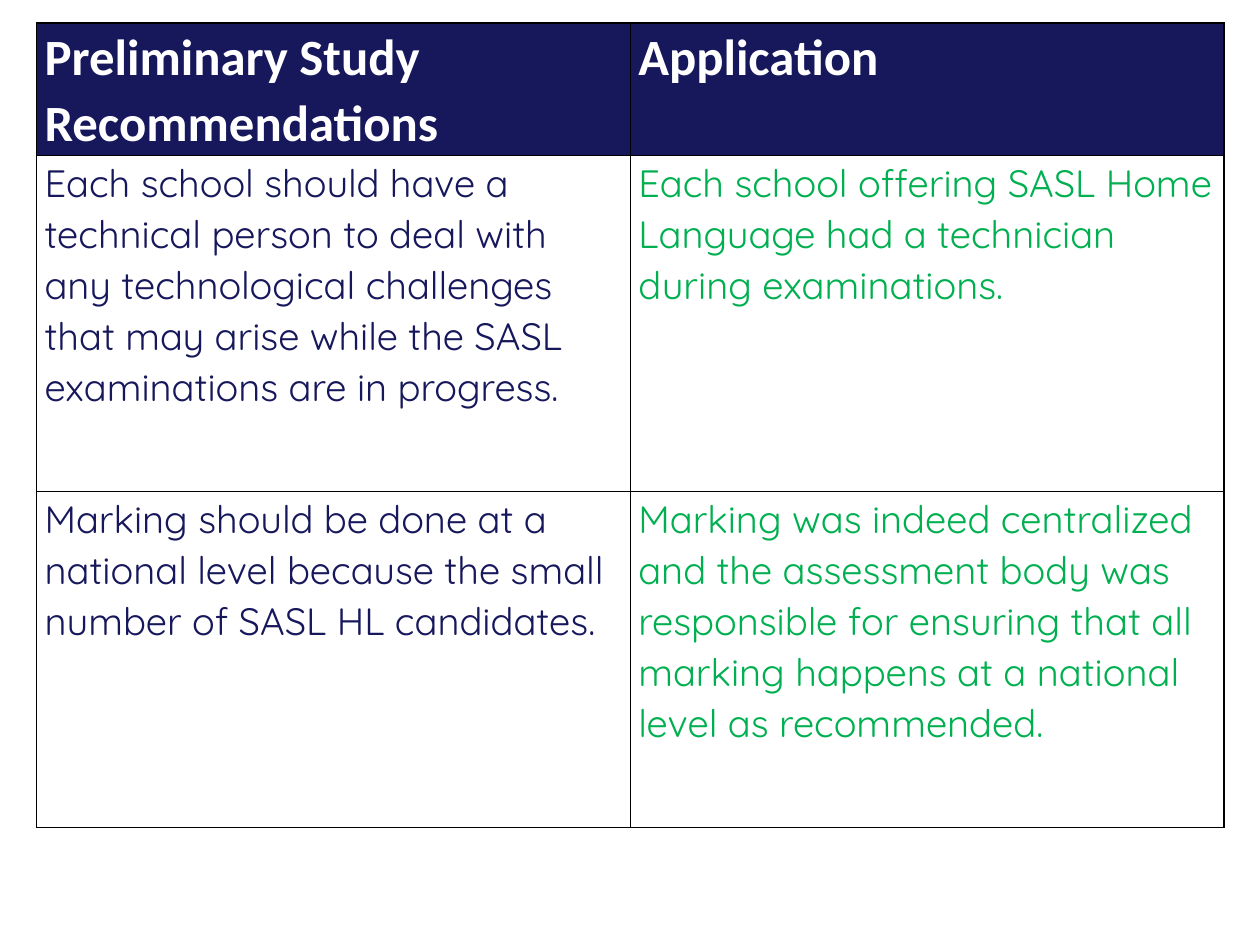
from lxml import etree
from pptx import Presentation
from pptx.dml.color import RGBColor
from pptx.oxml.ns import qn
from pptx.util import Inches, Pt

COLORS = {"navy": "17175C", "green": "00B050", "white": "FFFFFF", "black": "000000"}
HEADS = ["Preliminary Study Recommendations", "Application"]
ROWS = [
    ["Each school should have a technical person to deal with any technological "
     "challenges that may arise while the SASL examinations are in progress.",
     "Each school offering SASL Home Language had a technician during examinations."],
    ["Marking should be done at a national level because the small number of "
     "SASL HL candidates.",
     "Marking was indeed centralized and the assessment body was responsible for "
     "ensuring that all marking happens at a national level as recommended."],
]
HEAD_H = 1.15
CM_PER_INCH = 2.54


def color(name):
    return RGBColor.from_string(COLORS[name])


def add_borders(cell):
    props = cell._tc.get_or_add_tcPr()
    for i, side in enumerate(("lnL", "lnR", "lnT", "lnB")):
        line = etree.Element(qn("a:" + side), w=str(Pt(1)))
        fill = etree.SubElement(line, qn("a:solidFill"))
        etree.SubElement(fill, qn("a:srgbClr"), val=COLORS["black"])
        props.insert(i, line)


def fill_cell(cell, text, font, size, ink, back=None, bold=False):
    cell.margin_left = cell.margin_right = Inches(0.07)
    cell.margin_top = cell.margin_bottom = 0
    if back:
        cell.fill.solid()
        cell.fill.fore_color.rgb = color(back)
    else:
        cell.fill.background()
    add_borders(cell)
    para = cell.text_frame.paragraphs[0]
    para.line_spacing = 1.07
    run = para.add_run()
    run.text = text
    run.font.name = font
    run.font.size = Pt(size)
    run.font.bold = bold
    run.font.color.rgb = color(ink)


def add_study(slide, left, top, width, height):
    """Table of recommendations beside how each one was applied."""
    frame = slide.shapes.add_table(
        len(ROWS) + 1, len(HEADS),
        Inches(left), Inches(top), Inches(width), Inches(height))
    table = frame.table
    table.first_row = True
    table.horz_banding = False
    for col in table.columns:
        col.width = Inches(width / len(HEADS))
    for i, row in enumerate(table.rows):
        row.height = Inches((height - HEAD_H) / len(ROWS) if i else HEAD_H)
    for c, head in enumerate(HEADS):
        fill_cell(table.cell(0, c), head, "Calibri", 32, "white", "navy", True)
    for r, texts in enumerate(ROWS, 1):
        for c, (text, ink) in enumerate(zip(texts, ("navy", "green"))):
            fill_cell(table.cell(r, c), text, "Quicksand", 24, ink)


def main():
    deck = Presentation()
    deck.slide_width = round(Inches(28) / CM_PER_INCH)
    deck.slide_height = round(Inches(21) / CM_PER_INCH)
    slide = deck.slides.add_slide(deck.slide_layouts[6])
    add_study(slide, 0.32, 0.2, 10.39, 7.03)
    deck.save("out.pptx")


if __name__ == "__main__":
    main()
